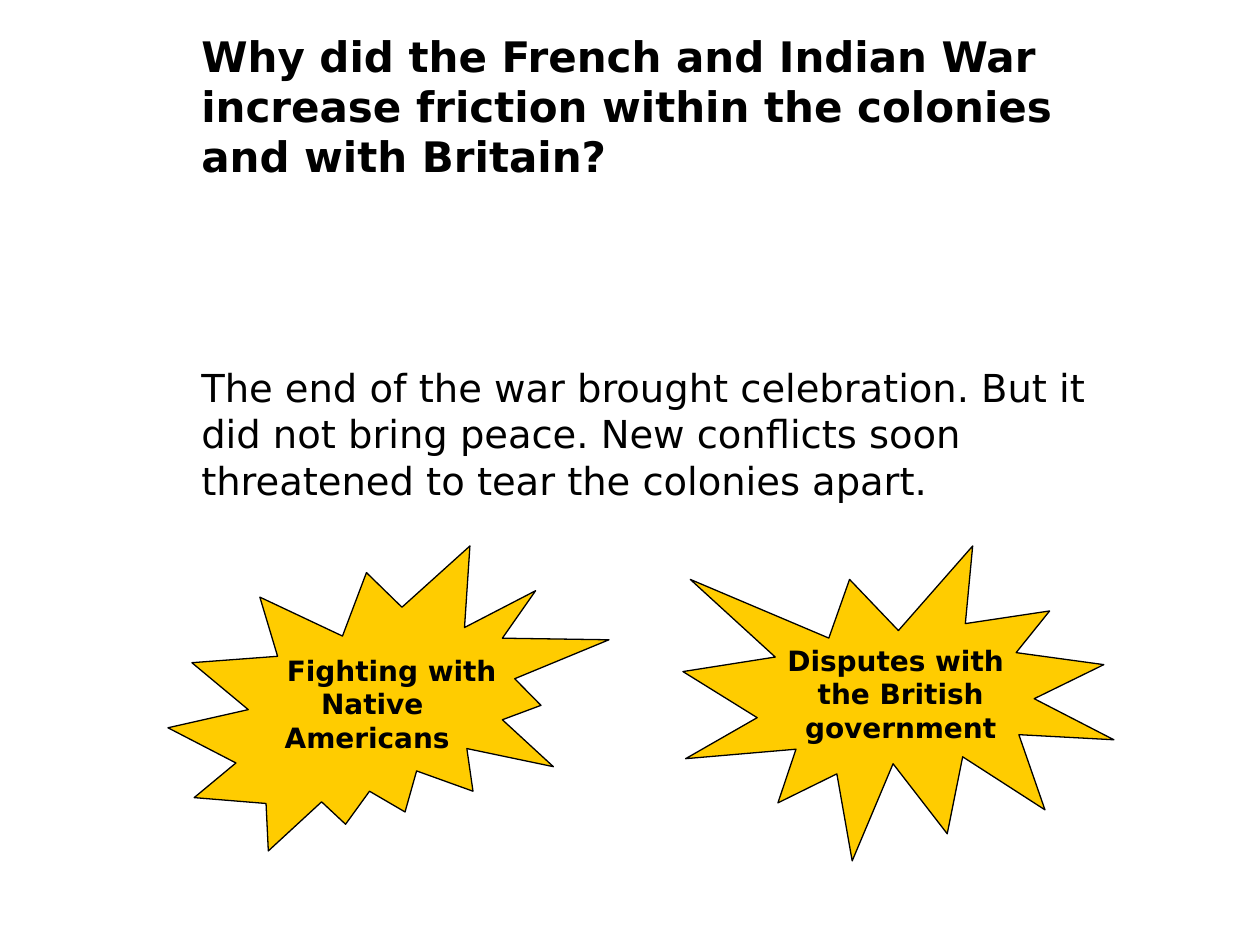
import pptx
import pptx.dml.color
import pptx.enum.shapes
import pptx.enum.text
import pptx.util

BLACK = pptx.dml.color.RGBColor(0x00, 0x00, 0x00)
GOLD = pptx.dml.color.RGBColor(0xFF, 0xCC, 0x00)
FONT = "DejaVu Sans"
EMU_PER_PX = 914400 / 126
SEAL = pptx.enum.shapes.MSO_SHAPE

# text, (left, top, width, height) in px, size in points, bold
TEXTS = [
    ("Why did the French and Indian War increase friction within the colonies "
     "and with Britain?", (189, 24, 945, 165), 24, True),
    ("The end of the war brought celebration. But it did not bring peace. "
     "New conflicts soon threatened to tear the colonies apart.",
     (189, 358, 945, 152), 22, False),
]
# preset, box in px, lines as (text, left indent px, right indent px)
BURSTS = [
    (SEAL.EXPLOSION2, (168, 546, 441, 305),
     [("Fighting with", 39, 0), ("Native", 0, 0), ("Americans", 0, 10)]),
    (SEAL.EXPLOSION1, (683, 546, 431, 315),
     [("Disputes with", 0, 0), ("the British", 10, 0), ("government", 10, 0)]),
]


def px(length):
    return pptx.util.Emu(round(length * EMU_PER_PX))


def format_runs(paragraph, size, bold):
    for run in paragraph.runs:
        run.font.name = FONT
        run.font.size = pptx.util.Pt(size)
        run.font.bold = bold
        run.font.color.rgb = BLACK


def add_text(slide, text, box, size, bold):
    text_frame = slide.shapes.add_textbox(*map(px, box)).text_frame
    text_frame.word_wrap = True
    text_frame.text = text
    format_runs(text_frame.paragraphs[0], size, bold)


def add_burst(slide, preset, box, lines):
    shape = slide.shapes.add_shape(preset, *map(px, box))
    shape.shadow.inherit = False
    shape.fill.solid()
    shape.fill.fore_color.rgb = GOLD
    shape.line.color.rgb = BLACK
    shape.line.width = pptx.util.Pt(0.75)
    text_frame = shape.text_frame
    text_frame.word_wrap = False
    text_frame.vertical_anchor = pptx.enum.text.MSO_ANCHOR.MIDDLE
    text_frame.text = "\n".join(text for text, _, _ in lines)
    for paragraph, (_, left, right) in zip(text_frame.paragraphs, lines):
        paragraph.alignment = pptx.enum.text.PP_ALIGN.CENTER
        properties = paragraph._p.get_or_add_pPr()
        properties.set("marL", str(px(left)))
        properties.set("marR", str(px(right)))
        format_runs(paragraph, 16, True)


def main():
    presentation = pptx.Presentation()
    presentation.slide_width = px(1260)
    presentation.slide_height = px(945)
    slide = presentation.slides.add_slide(presentation.slide_layouts[6])
    for text in TEXTS:
        add_text(slide, *text)
    for burst in BURSTS:
        add_burst(slide, *burst)
    presentation.save("out.pptx")


if __name__ == "__main__":
    main()
